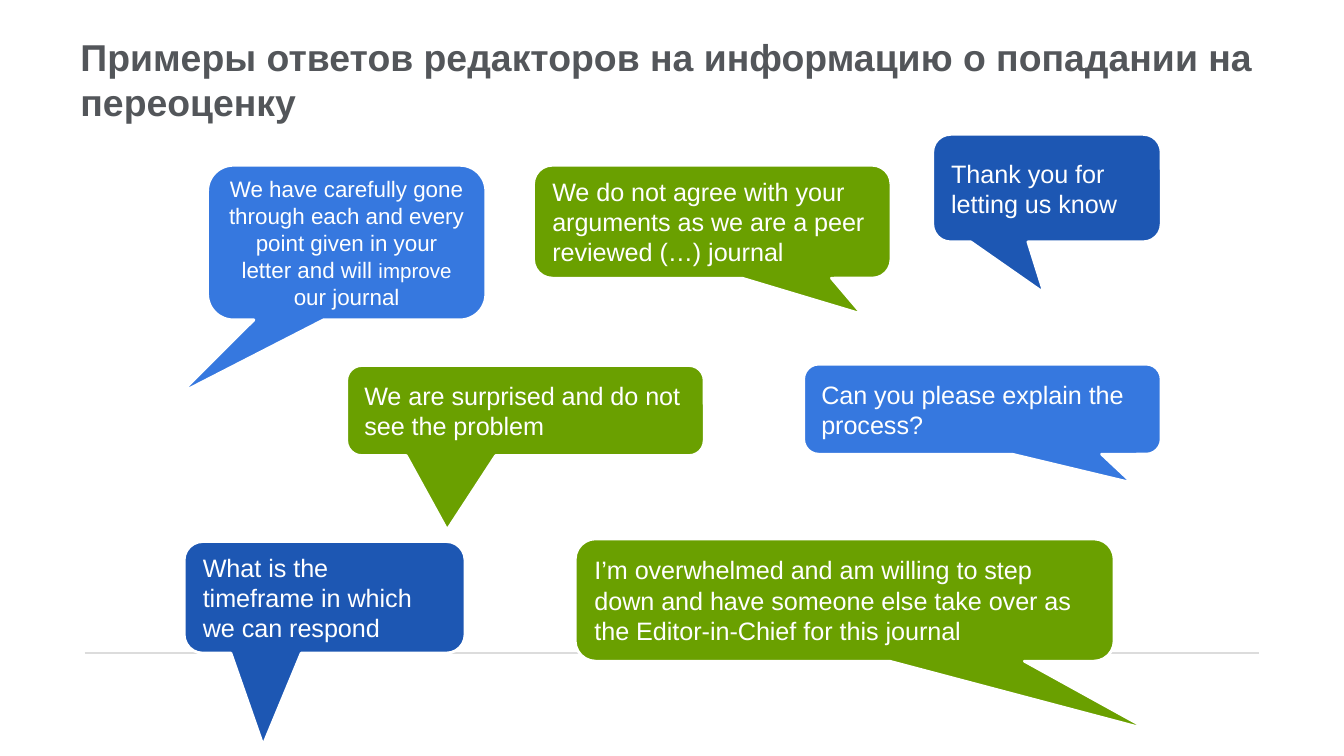
"""Build a slide of speech bubbles with editors' replies about journal re-evaluation."""
from lxml import etree
from pptx import Presentation
from pptx.dml.color import RGBColor
from pptx.enum.shapes import MSO_CONNECTOR, MSO_SHAPE
from pptx.enum.text import MSO_ANCHOR, PP_ALIGN
from pptx.oxml.ns import qn
from pptx.util import Inches, Pt

CALLOUT = MSO_SHAPE.ROUNDED_RECTANGULAR_CALLOUT
STRAIGHT = MSO_CONNECTOR.STRAIGHT
MIDDLE = MSO_ANCHOR.MIDDLE
LEFT, CENTER = PP_ALIGN.LEFT, PP_ALIGN.CENTER
COLORS = {
    "title": "53565A",
    "rule": "DCDCDC",
    "white": "FFFFFF",
    "blue": "3678DF",
    "navy": "1D57B3",
    "green": "6AA000",
}
CORNER = 0.167

presentation = Presentation()
presentation.slide_width = Inches(10)
presentation.slide_height = presentation.slide_width * 9 // 16
column = presentation.slide_width / 100
row = presentation.slide_height / 56.25
slide = presentation.slides.add_slide(presentation.slide_layouts[6])


def grid(left, top, width, height):
    return [round(value) for value in (left * column, top * row, width * column, height * row)]


def style(paragraph, size, color, alignment=LEFT, bold=False):
    paragraph.alignment = alignment
    paragraph.font.name = "Arial"
    paragraph.font.size = Pt(size)
    paragraph.font.bold = bold
    paragraph.font.color.rgb = RGBColor.from_string(COLORS[color])


left, top, right, bottom = grid(6.3, 48.6, 93.7, 48.6)
rule = slide.shapes.add_connector(STRAIGHT, left, top, right, bottom)
rule.line.color.rgb = RGBColor.from_string(COLORS["rule"])
rule.line.width = Pt(1)
etree.SubElement(rule._element.spPr, qn("a:effectLst"))

title = slide.shapes.add_textbox(*grid(5, 4.2, 90.1, 3.4))
title_frame = title.text_frame
title_frame.word_wrap = True
title_frame.vertical_anchor = MIDDLE
title_frame.margin_top = title_frame.margin_bottom = 0
title_frame.text = "Примеры ответов редакторов на информацию о попадании на переоценку"
style(title_frame.paragraphs[0], 20, "title", bold=True)

bubbles = [
    ((15.45, 12.3, 20.7, 11.5), (-0.598, 0.975), "blue", 12, CENTER,
     [("We have carefully gone through each and every point given in your letter and will ", None),
      ("improve", 11), (" our journal", None)]),
    ((39.7, 12.3, 26.6, 8.4), (0.419, 0.819), "green", 13.5, LEFT,
     [("We do not agree with your arguments as we are a peer reviewed (…) journal", None)]),
    ((59.8, 27.1, 26.6, 6.7), (0.419, 0.819), "blue", 13.5, LEFT,
     [("Can you please explain the process?", None)]),
    ((25.8, 27.2, 26.6, 6.7), (-0.219, 1.325), "green", 13.5, LEFT,
     [("We are surprised and do not see the problem", None)]),
    ((69.4, 10, 17, 8), (-0.013, 0.975), "navy", 13.5, LEFT,
     [("Thank you for letting us know", None)]),
    ((13.7, 40.3, 20.9, 8.3), (-0.219, 1.325), "navy", 13.5, LEFT,
     [("What is the timeframe in which we can respond", None)]),
    ((42.8, 40.1, 40.1, 9.1), (0.564, 1.061), "green", 13.5, LEFT,
     [("I’m overwhelmed and am willing to step down and have someone else take over as "
       "the Editor-in-Chief for this journal", None)]),
]

for place, tip, color, size, alignment, pieces in bubbles:
    bubble = slide.shapes.add_shape(CALLOUT, *grid(*place))
    for index, value in enumerate((*tip, CORNER)):
        bubble.adjustments[index] = value
    bubble.shadow.inherit = False
    bubble.fill.solid()
    bubble.fill.fore_color.rgb = RGBColor.from_string(COLORS[color])
    bubble.line.color.rgb = RGBColor.from_string(COLORS["white"])
    bubble.line.width = Pt(1.5)
    bubble.text_frame.word_wrap = True
    bubble.text_frame.vertical_anchor = MIDDLE
    paragraph = bubble.text_frame.paragraphs[0]
    style(paragraph, size, "white", alignment)
    for text, run_size in pieces:
        run = paragraph.add_run()
        run.text = text
        if run_size:
            run.font.size = Pt(run_size)

presentation.save("out.pptx")
